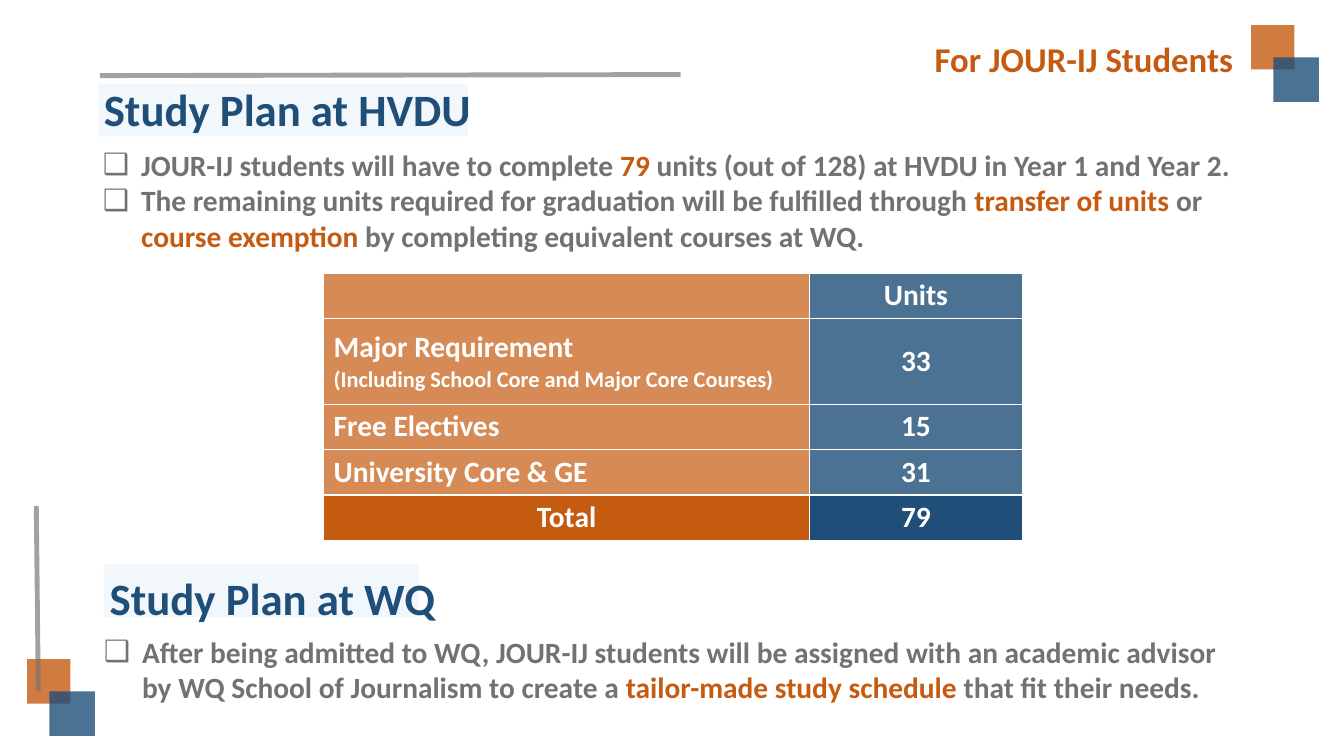
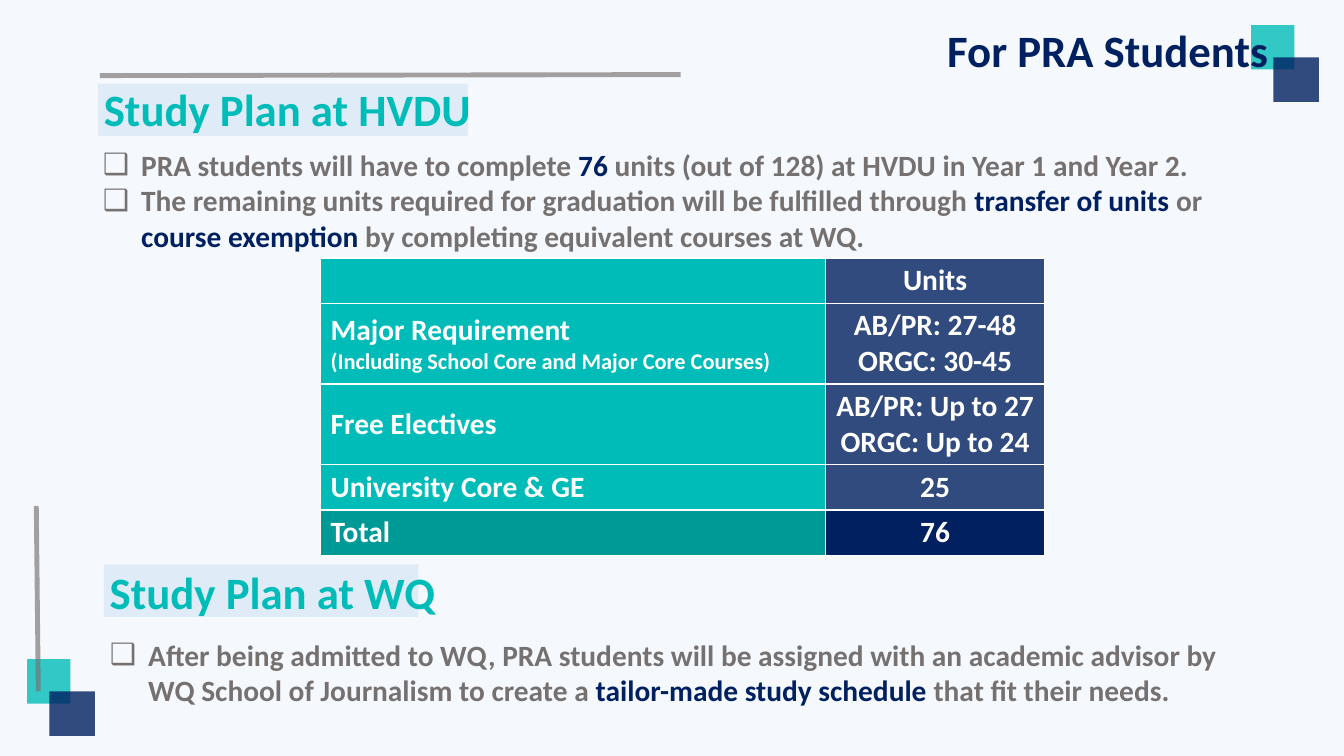
from dataclasses import dataclass

from lxml.etree import SubElement
from pptx import Presentation
from pptx.dml.color import RGBColor
from pptx.enum.shapes import MSO_CONNECTOR, MSO_SHAPE
from pptx.enum.text import MSO_ANCHOR, MSO_AUTO_SIZE, PP_ALIGN
from pptx.oxml.ns import qn
from pptx.util import Inches, Pt

FONT = "Calibri"
BODY_SIZE = 21
HEADING_SIZE = 32
BULLET_INDENT = Inches(0.38)
CELL_MARGIN = Inches(0.04)
HOME_UNIVERSITY = "HVDU"
PARTNER_UNIVERSITY = "WQ"
COLORS = {
    "white": "FFFFFF", "ice": "F5F9FD", "pale": "DEEBF7", "sky": "BDD7EE",
    "gray": "767171", "orange": "C55A11", "blue": "1F4E79",
    "teal": "00BCB8", "deep_teal": "009A96", "navy": "002060",
}


@dataclass(frozen=True)
class Box:
    left: float
    top: float
    width: float
    height: float


@dataclass(frozen=True)
class Theme:
    background: str
    band: str
    heading: str
    first: str
    second: str
    total: str
    label_opacity: int


@dataclass(frozen=True)
class UnitTable:
    left: float
    top: float
    columns: tuple[float, ...]
    heights: tuple[float, ...]
    units: tuple[str, ...]
    total_align: PP_ALIGN


@dataclass(frozen=True)
class StudyPlan:
    programme: str
    units: str
    theme: Theme
    accent: str
    audience_box: Box
    audience_size: float
    audience_spacing: float
    table: UnitTable
    second_heading_top: float
    second_list: Box


# Text shared by both slides; parts between bars are highlighted
HOME_ITEMS = (
    "{programme} students will have to complete |{units}| units (out of 128) "
    f"at {HOME_UNIVERSITY} in Year 1 and Year 2.",
    "The remaining units required for graduation will be fulfilled through "
    "|transfer of units |or |course exemption |by completing equivalent courses "
    f"at {PARTNER_UNIVERSITY}.",
)
PARTNER_ITEMS = (
    f"After being admitted to {PARTNER_UNIVERSITY}, "
    "{programme} students will be assigned with an academic advisor by "
    f"{PARTNER_UNIVERSITY} School of Journalism to create a "
    "|tailor-made study schedule |that fit their needs.",
)
ROW_LABELS = (
    "",
    "Major Requirement\n(Including School Core and Major Core Courses)",
    "Free Electives",
    "University Core & GE",
    "Total",
)

PLANS = (
    StudyPlan(
        "JOUR-IJ", "79",
        Theme("white", "pale", "blue", "orange", "blue", "orange", 70), "orange",
        Box(9, 0.19, 3.41, 0.64), 24.8, 0.7,
        UnitTable(3.21, 2.71, (4.82, 2.11), (0.45, 0.85, 0.45, 0.45, 0.45),
                  ("Units", "33", "15", "31", "79"), PP_ALIGN.CENTER),
        5.46, Box(0.93, 6.24, 11.48, 0.81),
    ),
    StudyPlan(
        "PRA", "76",
        Theme("ice", "sky", "teal", "teal", "navy", "deep_teal", 100), "navy",
        Box(9.27, 0.18, 3.41, 0.64), 32, 0.9,
        UnitTable(3.18, 2.56, (5.01, 2.17), (0.45, 0.8, 0.8, 0.45, 0.45),
                  ("Units", "AB/PR: 27-48\nORGC: 30-45",
                   "AB/PR: Up to 27\nORGC: Up to 24", "25", "76"), PP_ALIGN.LEFT),
        5.4, Box(0.99, 6.27, 11.48, 0.81),
    ),
)


def rgb(name: str) -> RGBColor:
    return RGBColor.from_string(COLORS[name])


def inches(box: Box) -> tuple:
    return tuple(Inches(n) for n in (box.left, box.top, box.width, box.height))


def set_opacity(element, percent: int) -> None:
    for color in element.iter(qn("a:srgbClr")):
        SubElement(color, qn("a:alpha")).set("val", str(percent * 1000))


def set_font(paragraph, size: float, color: str) -> None:
    font = paragraph.font
    font.name, font.size, font.bold = FONT, Pt(size), True
    font.color.rgb = rgb(color)


def place(shape, box: Box) -> None:
    shape.left, shape.top, shape.width, shape.height = inches(box)


# Decoration
def add_square(slide, box: Box, color: str, opacity: int):
    shape = slide.shapes.add_shape(MSO_SHAPE.RECTANGLE, *inches(box))
    shape.shadow.inherit = False
    shape.fill.solid()
    shape.fill.fore_color.rgb = rgb(color)
    shape.line.fill.background()
    set_opacity(shape.element.spPr, opacity)
    return shape


def add_rule(slide, start: tuple[float, float], end: tuple[float, float]) -> None:
    rule = slide.shapes.add_connector(
        MSO_CONNECTOR.STRAIGHT, *(Inches(n) for n in start + end))
    rule.line.color.rgb = rgb("gray")
    rule.line.width = Pt(3.5)
    set_opacity(rule.element.spPr, 66)
    SubElement(rule.element.spPr, qn("a:effectLst"))


def add_decoration(slide, theme: Theme) -> None:
    slide.background.fill.solid()
    slide.background.fill.fore_color.rgb = rgb(theme.background)
    # Heading bands lie behind the placeholders
    for box in (Box(0.97, 0.83, 3.67, 0.52), Box(1.03, 5.6, 3.12, 0.52)):
        band = add_square(slide, box, theme.band, 39)
        band.element.getparent().insert(2, band.element)
    add_rule(slide, (0.99, 0.75), (6.75, 0.74))
    for left, top in ((12.41, 0.25), (0.27, 6.54)):
        add_square(slide, Box(left, top, 0.43, 0.44), theme.first, 80)
        add_square(slide, Box(left + 0.22, top + 0.32, 0.45, 0.44), theme.second, 80)
    add_rule(slide, (0.36, 5.02), (0.38, 6.86))


# Text
def write_line(shape, text: str, size: float, color: str,
               align: PP_ALIGN = PP_ALIGN.LEFT, spacing: float = 0.9) -> None:
    frame = shape.text_frame
    frame.word_wrap = True
    frame.auto_size = MSO_AUTO_SIZE.NONE
    frame.vertical_anchor = MSO_ANCHOR.BOTTOM
    paragraph = frame.paragraphs[0]
    paragraph.text = text
    paragraph.alignment = align
    paragraph.line_spacing = spacing
    set_font(paragraph, size, color)


def write_list(shape, items: tuple[str, ...], plan: StudyPlan) -> None:
    frame = shape.text_frame
    frame.auto_size = MSO_AUTO_SIZE.NONE
    for index, item in enumerate(items):
        paragraph = frame.add_paragraph() if index else frame.paragraphs[0]
        properties = paragraph._p.get_or_add_pPr()
        properties.set("marL", str(BULLET_INDENT))
        properties.set("indent", str(-BULLET_INDENT))
        SubElement(properties, qn("a:buChar")).set("char", "❑")
        paragraph.space_before = Pt(0)
        set_font(paragraph, BODY_SIZE, "gray")
        text = item.format(programme=plan.programme, units=plan.units)
        for part, words in enumerate(text.split("|")):
            run = paragraph.add_run()
            run.text = words
            if part % 2:
                run.font.color.rgb = rgb(plan.accent)


# Table
def add_borders(cell) -> None:
    properties = cell._tc.get_or_add_tcPr()
    for index, side in enumerate(("lnL", "lnR", "lnT", "lnB")):
        line = SubElement(properties, qn(f"a:{side}"), w=str(Pt(1)))
        fill = SubElement(line, qn("a:solidFill"))
        SubElement(fill, qn("a:srgbClr")).set("val", COLORS["white"])
        properties.insert(index, line)


def write_cell(cell, text: str, align: PP_ALIGN, color: str, opacity: int) -> None:
    cell.vertical_anchor = MSO_ANCHOR.MIDDLE
    cell.margin_top = cell.margin_bottom = CELL_MARGIN
    cell.fill.solid()
    cell.fill.fore_color.rgb = rgb(color)
    if opacity < 100:
        set_opacity(cell._tc.tcPr, opacity)
    add_borders(cell)
    cell.text_frame.text = text
    for paragraph in cell.text_frame.paragraphs:
        paragraph.alignment = align
        set_font(paragraph, 16 if paragraph.text.startswith("(") else BODY_SIZE, "white")


def add_unit_table(slide, layout: UnitTable, theme: Theme) -> None:
    box = Box(layout.left, layout.top, sum(layout.columns), sum(layout.heights))
    table = slide.shapes.add_table(
        len(layout.heights), len(layout.columns), *inches(box)).table
    for column, width in zip(table.columns, layout.columns):
        column.width = Inches(width)
    last = len(ROW_LABELS) - 1
    for index, (label, units) in enumerate(zip(ROW_LABELS, layout.units)):
        table.rows[index].height = Inches(layout.heights[index])
        is_total = index == last
        write_cell(table.cell(index, 0), label,
                   layout.total_align if is_total else PP_ALIGN.LEFT,
                   theme.total if is_total else theme.first,
                   100 if is_total else theme.label_opacity)
        write_cell(table.cell(index, 1), units, PP_ALIGN.CENTER,
                   theme.second, 100 if is_total else 80)


def add_plan_slide(presentation, plan: StudyPlan) -> None:
    # Layout with a title and two lists
    slide = presentation.slides.add_slide(presentation.slide_layouts[3])
    theme = plan.theme
    add_decoration(slide, theme)

    title = slide.shapes.title
    place(title, Box(0.93, 0.61, 6.44, 0.79))
    write_line(title, f"Study Plan at {HOME_UNIVERSITY}", HEADING_SIZE, theme.heading)

    audience = slide.shapes.add_textbox(*inches(plan.audience_box))
    write_line(audience, f"For {plan.programme} Students ", plan.audience_size,
               plan.accent, PP_ALIGN.RIGHT, plan.audience_spacing)

    home_list, partner_list = slide.placeholders[1], slide.placeholders[2]
    place(home_list, Box(0.92, 1.41, 11.92, 1.16))
    write_list(home_list, HOME_ITEMS, plan)

    add_unit_table(slide, plan.table, theme)

    heading = slide.shapes.add_textbox(
        *inches(Box(0.99, plan.second_heading_top, 6.44, 0.79)))
    write_line(heading, f"Study Plan at {PARTNER_UNIVERSITY}", HEADING_SIZE, theme.heading)
    place(partner_list, plan.second_list)
    write_list(partner_list, PARTNER_ITEMS, plan)


def main() -> None:
    presentation = Presentation()
    presentation.slide_width = Inches(13.33)
    presentation.slide_height = Inches(7.5)
    for plan in PLANS:
        add_plan_slide(presentation, plan)
    presentation.save("out.pptx")


if __name__ == "__main__":
    main()
